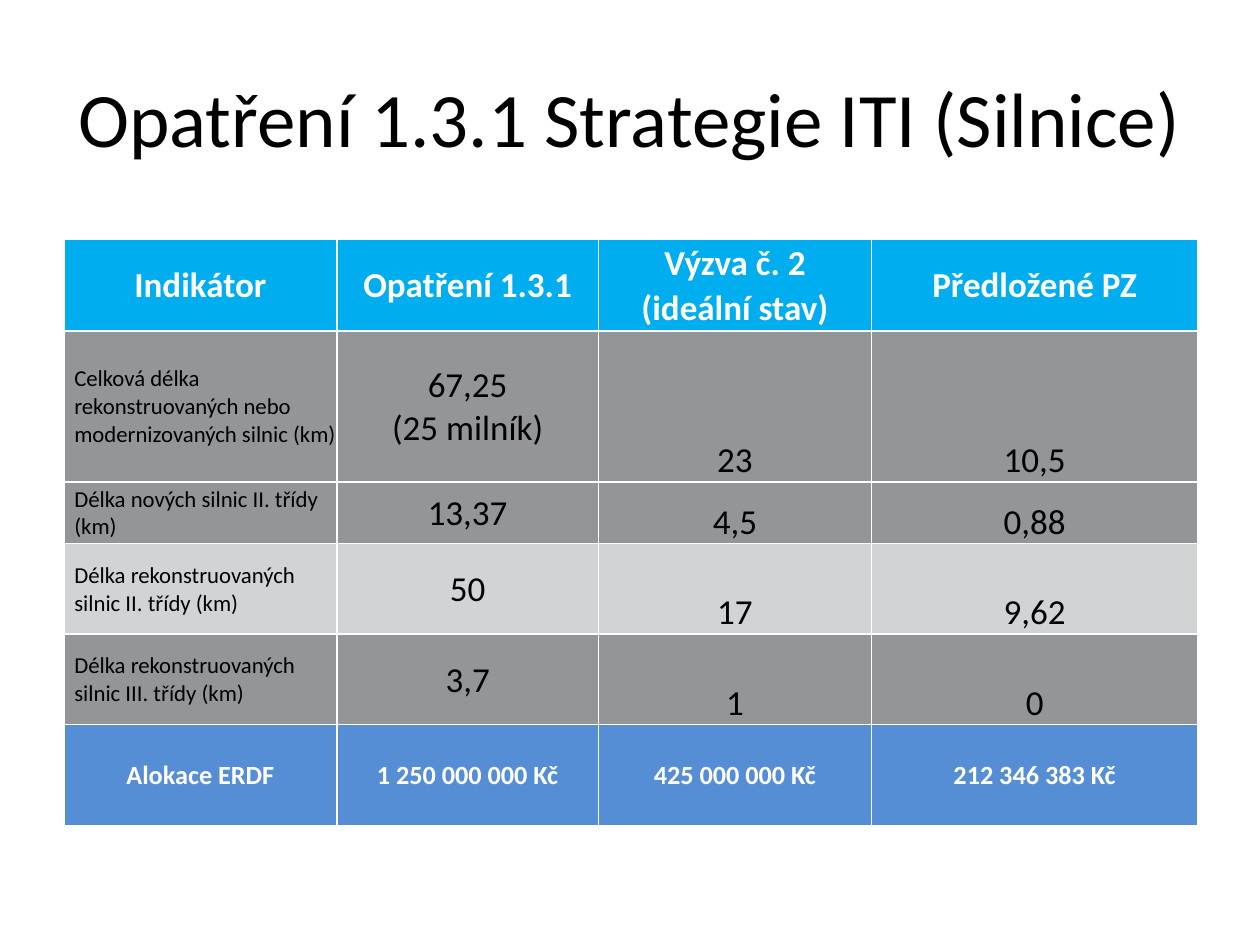
"""Build a slide with a table of road indicators for measure 1.3.1."""
from dataclasses import dataclass

from lxml import etree
from pptx import Presentation
from pptx.dml.color import RGBColor as Rgb
from pptx.enum import text as t
from pptx.oxml import ns
from pptx.util import Pt


@dataclass(frozen=True)
class Theme:
    font: str = "Calibri"
    black: str = "000000"
    white: str = "FFFFFF"
    cyan: str = "00AEEF"
    dark: str = "939598"
    light: str = "D1D3D4"
    blue: str = "558ED5"
    title: float = 44
    large: float = 20
    total: float = 15
    label: float = 13


def style(par, size, color, bold=False):
    par.font.name = look.font
    par.font.size = Pt(size)
    par.font.bold = bold
    par.font.color.rgb = Rgb.from_string(color)


def edge(cell, side, width):
    line = etree.SubElement(cell._tc.get_or_add_tcPr(), ns.qn(f"a:ln{side}"), w=str(Pt(width)))
    if not width:
        etree.SubElement(line, ns.qn("a:noFill"))
        return
    fill = etree.SubElement(line, ns.qn("a:solidFill"))
    etree.SubElement(fill, ns.qn("a:srgbClr"), val=look.white)


look = Theme()
rows = [
    ("Indikátor", "Opatření 1.3.1", "Výzva č. 2", "Předložené PZ"),
    ("", "", "(ideální stav)", ""),
    ("Celková délka rekonstruovaných nebo modernizovaných silnic (km)",
     "67,25\n(25 milník)", "23", "10,5"),
    ("Délka nových silnic II. třídy (km)", "13,37", "4,5", "0,88"),
    ("Délka rekonstruovaných silnic II. třídy (km)", "50", "17", "9,62"),
    ("Délka rekonstruovaných silnic III. třídy (km)", "3,7", "1", "0"),
    ("Alokace ERDF", "1 250 000 000 Kč", "425 000 000 Kč", "212 346 383 Kč"),
]
wide = [156, 149.5, 156, 186.5]
high = [26, 26, 86.4, 35.2, 51.8, 51.8, 57.6]
fills = [look.cyan] * 2 + [look.dark] * 2 + [look.light, look.dark, look.blue]
rules = [1, 0, 1.5, 1.5, 1, 1, 1, 1]
last = len(rows) - 1

deck = Presentation()
deck.slide_width, deck.slide_height = Pt(720), Pt(540)
slide = deck.slides.add_slide(deck.slide_layouts[5])

title = slide.shapes.title
title.left, title.top, title.width, title.height = Pt(36), Pt(21.6), Pt(648), Pt(90)
title.text_frame.text = "Opatření 1.3.1 Strategie ITI (Silnice)"
title.text_frame.vertical_anchor = t.MSO_ANCHOR.MIDDLE
head = title.text_frame.paragraphs[0]
head.alignment = t.PP_ALIGN.CENTER
style(head, look.title, look.black)

frame = slide.shapes.add_table(len(rows), len(wide), Pt(36.5), Pt(137), Pt(sum(wide)), Pt(sum(high)))
table = frame.table
table.first_row = table.horz_banding = False
for col, width in zip(table.columns, wide):
    col.width = Pt(width)
for row, height in zip(table.rows, high):
    row.height = Pt(height)
for c in (0, 1, 3):
    table.cell(0, c).merge(table.cell(1, c))

for r, row in enumerate(rows):
    body = 1 < r < last
    size = look.large if r < last else look.total
    for c, words in enumerate(row):
        cell = table.cell(r, c)
        label = body and c == 0
        base = rules[r + (cell.span_height if cell.is_merge_origin else 1)]
        for side, width in zip("LRTB", (1, 1, rules[r], base)):
            edge(cell, side, width)
        cell.fill.solid()
        cell.fill.fore_color.rgb = Rgb.from_string(fills[r])
        cell.margin_left = Pt(6 if label else 0.7)
        cell.margin_right = cell.margin_top = Pt(0.7)
        cell.margin_bottom = 0
        cell.vertical_anchor = t.MSO_ANCHOR.BOTTOM if body and c > 1 else t.MSO_ANCHOR.MIDDLE
        cell.text = words
        for par in cell.text_frame.paragraphs:
            par.alignment = t.PP_ALIGN.LEFT if label else t.PP_ALIGN.CENTER
            style(par, look.label if label else size,
                  look.black if body else look.white, not body)

deck.save("out.pptx")
